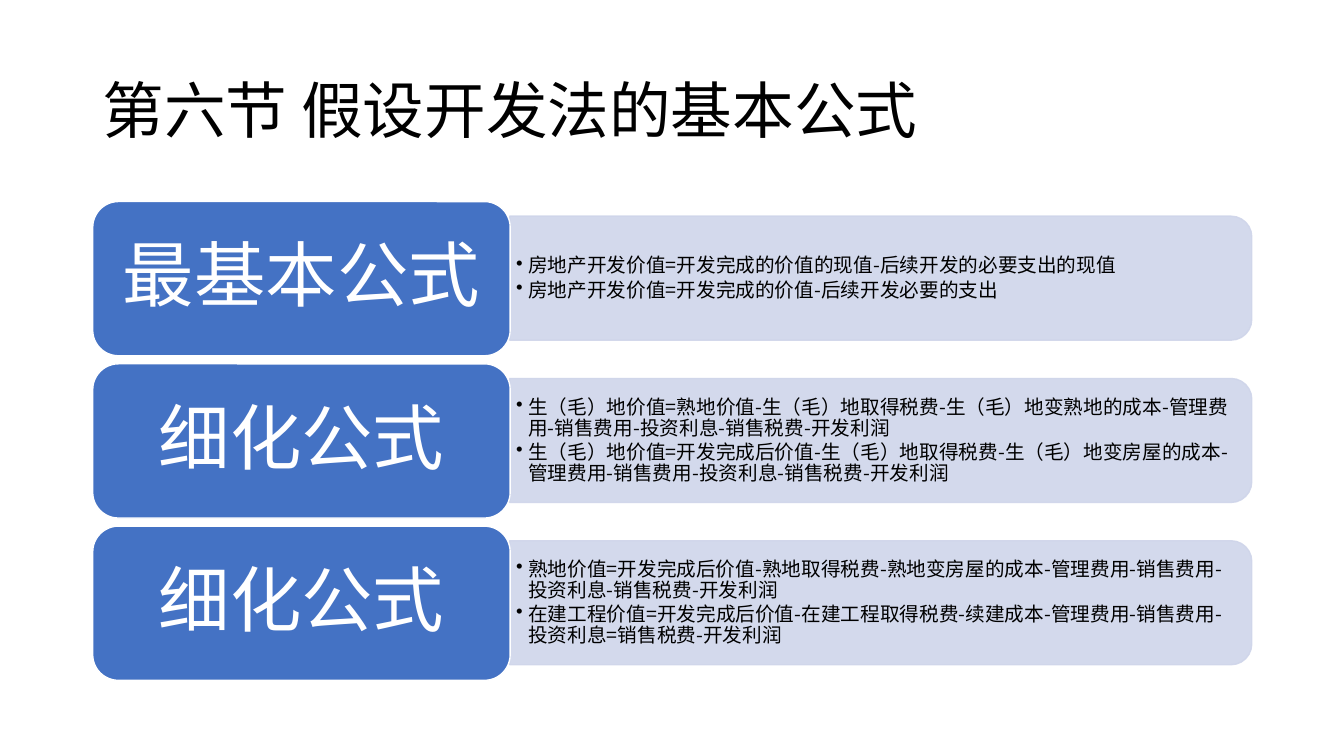
import lxml.etree
import pptx
import pptx.dml.color
import pptx.enum.shapes
import pptx.enum.text
import pptx.oxml.ns
import pptx.util

PX = 9144
FONT = "Noto Sans CJK SC"
SHAPES = pptx.enum.shapes.MSO_SHAPE
ALIGN = pptx.enum.text.PP_ALIGN
FORMULAS = [
    ("最基本公式", [
        "房地产开发价值=开发完成的价值的现值-后续开发的必要支出的现值",
        "房地产开发价值=开发完成的价值-后续开发必要的支出",
    ]),
    ("细化公式", [
        "生（毛）地价值=熟地价值-生（毛）地取得税费-生（毛）地变熟地的成本"
        "-管理费用-销售费用-投资利息-销售税费-开发利润",
        "生（毛）地价值=开发完成后价值-生（毛）地取得税费-生（毛）地变房屋的成本"
        "-管理费用-销售费用-投资利息-销售税费-开发利润",
    ]),
    ("细化公式", [
        "熟地价值=开发完成后价值-熟地取得税费-熟地变房屋的成本"
        "-管理费用-销售费用-投资利息-销售税费-开发利润",
        "在建工程价值=开发完成后价值-在建工程取得税费-续建成本"
        "-管理费用-销售费用-投资利息=销售税费-开发利润",
    ]),
]


def emu(*lengths):
    """Turn px lengths into EMU."""
    return [pptx.util.Emu(length * PX) for length in lengths]


def color(value):
    """Turn a hex string into a colour."""
    return pptx.dml.color.RGBColor.from_string(value)


def add_element(parent, tag, **attributes):
    """Append a drawing element with the given attributes."""
    return lxml.etree.SubElement(parent, pptx.oxml.ns.qn(tag), attributes)


def add_block(page, kind, place, fill, line, opacity=100):
    """Add a filled and outlined preset shape."""
    block = page.shapes.add_shape(kind, *emu(*place))
    block.shadow.inherit = False
    block.fill.solid()
    block.fill.fore_color.rgb = color(fill)
    block.line.color.rgb = color(line)
    block.line.width = pptx.util.Pt(1)
    if opacity < 100:
        for paint in block._element.spPr.iter(pptx.oxml.ns.qn("a:srgbClr")):
            add_element(paint, "a:alpha", val=str(opacity * 1000))
    return block


def add_text(page, place, lines, size, ink, margins, after=0,
             align=ALIGN.LEFT, bullet=False):
    """Add a vertically centred text box with one paragraph per line."""
    box = page.shapes.add_textbox(*emu(*place))
    frame = box.text_frame
    frame.word_wrap = True
    frame.vertical_anchor = pptx.enum.text.MSO_ANCHOR.MIDDLE
    side, edge = emu(*margins)
    frame.margin_left = frame.margin_right = side
    frame.margin_top = frame.margin_bottom = edge
    for index, line in enumerate(lines):
        para = frame.add_paragraph() if index else frame.paragraphs[0]
        para.alignment = align
        para.line_spacing = 0.9
        para.space_after = pptx.util.Pt(after)
        if bullet:
            properties = para._p.get_or_add_pPr()
            properties.set("marL", str(12 * PX))
            properties.set("indent", str(-12 * PX))
            add_element(properties, "a:buChar", char="•")
        span = para.add_run()
        span.text = line
        span.font.name = FONT
        span.font.size = pptx.util.Pt(size)
        span.font.color.rgb = color(ink)
        add_element(span._r.get_or_add_rPr(), "a:ea", typeface=FONT)


def add_title(page, place):
    """Add the heading of the slide."""
    add_text(page, place, ["第六节 假设开发法的基本公式"], 44, "000000", (10, 5))


def add_formula_row(page, place, name, formulas):
    """Add a name card and the formula panel that joins its right side."""
    left, top, width, height = place
    card_width, panel_height, pad = 414, 123, 7
    panel_left = left + card_width
    panel_width = width - card_width
    middle = top + height // 2
    turned = (panel_left + (panel_width - panel_height) // 2,
              middle - panel_width // 2, panel_height, panel_width)
    panel = add_block(page, SHAPES.ROUND_2_SAME_RECTANGLE, turned,
                      "CFD5EA", "CFD5EA", 90)
    panel.rotation = 90
    add_text(page, (panel_left, middle - 55, panel_width - 6, 111), formulas,
             14, "000000", (6, 3), 2.1, bullet=True)
    add_block(page, SHAPES.ROUNDED_RECTANGLE, (left, top, card_width, height),
              "4472C4", "FFFFFF")
    add_text(page, (left + pad, top + pad, card_width - 2 * pad, height - 2 * pad),
             [name], 51, "FFFFFF", (21, 11), 17.85, ALIGN.CENTER)


def add_formula_list(page, place):
    """Stack the formula rows with equal gaps."""
    left, top, width, height = place
    gap = 8
    row_height = (height - gap * (len(FORMULAS) - 1)) // len(FORMULAS)
    for index, (name, formulas) in enumerate(FORMULAS):
        row_top = top + index * (row_height + gap)
        add_formula_row(page, (left, row_top, width, row_height), name, formulas)


def main():
    """Build and save the deck."""
    deck = pptx.Presentation()
    deck.slide_width, deck.slide_height = emu(1333, 750)
    page = deck.slides.add_slide(deck.slide_layouts[6])
    add_title(page, (92, 40, 1150, 145))
    add_formula_list(page, (92, 200, 1150, 475))
    deck.save("out.pptx")


if __name__ == "__main__":
    main()
